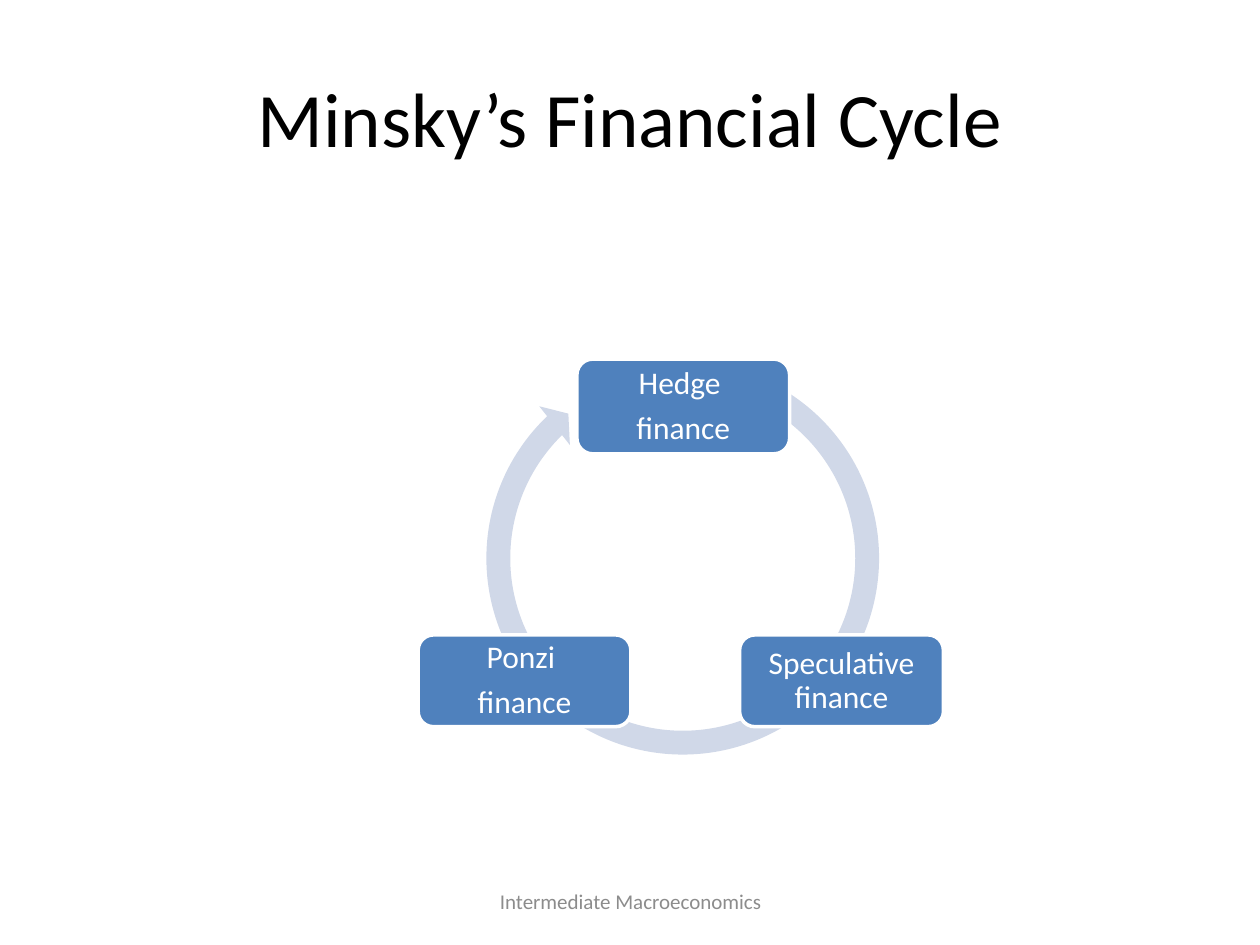
from pptx import Presentation
from pptx import util as u
from pptx.dml.color import RGBColor
from pptx.enum import shapes, text

BLACK = RGBColor(0x00, 0x00, 0x00)
WHITE = RGBColor(0xFF, 0xFF, 0xFF)
GREY = RGBColor(0x8C, 0x8C, 0x8C)
BLUE = RGBColor(0x4F, 0x81, 0xBD)
PALE_BLUE = RGBColor(0xD0, 0xD8, 0xE8)
FONT = "Calibri"

STAGES = [
    (["Hedge ", "finance"], (11.63, 7.24, 4.29, 1.91)),
    (["Speculative finance"], (14.91, 12.8, 4.11, 1.85)),
    (["Ponzi ", "finance"], (8.43, 12.8, 4.29, 1.85)),
]


def lengths(place):
    return [u.Cm(value) for value in place]


def write_centred(frame, lines, size, color):
    frame.word_wrap = True
    frame.vertical_anchor = text.MSO_ANCHOR.MIDDLE
    for index, line in enumerate(lines):
        paragraph = frame.paragraphs[0] if index == 0 else frame.add_paragraph()
        paragraph.alignment = text.PP_ALIGN.CENTER
        run = paragraph.add_run()
        run.text = line
        run.font.name = FONT
        run.font.size = u.Pt(size)
        run.font.color.rgb = color


def add_label(slide, place, words, size, color):
    label = slide.shapes.add_textbox(*lengths(place))
    write_centred(label.text_frame, [words], size, color)


def add_cycle_arrow(cycle):
    arrow = cycle.shapes.add_shape(
        shapes.MSO_SHAPE.CIRCULAR_ARROW, *lengths((9.55, 7.04, 8.43, 8.43)))
    for index, value in enumerate((0.057, 3.405, 135.584, 175.137, 0.059)):
        arrow.adjustments[index] = value
    arrow.shadow.inherit = False
    arrow.fill.solid()
    arrow.fill.fore_color.rgb = PALE_BLUE
    arrow.line.fill.background()


def add_stage(cycle, lines, place):
    stage = cycle.shapes.add_shape(
        shapes.MSO_SHAPE.ROUNDED_RECTANGLE, *lengths(place))
    stage.shadow.inherit = False
    stage.fill.solid()
    stage.fill.fore_color.rgb = BLUE
    stage.line.color.rgb = WHITE
    stage.line.width = u.Pt(2)
    frame = stage.text_frame
    frame.margin_left = frame.margin_right = u.Cm(0.18)
    frame.margin_top = frame.margin_bottom = u.Cm(0.18)
    write_centred(frame, lines, 18, WHITE)
    for paragraph in frame.paragraphs:
        paragraph.line_spacing = 0.9
        paragraph.space_after = u.Pt(6.3)


def main():
    deck = Presentation()
    deck.slide_width = u.Cm(25.4)
    deck.slide_height = u.Cm(19.05)
    slide = deck.slides.add_slide(deck.slide_layouts[6])
    add_label(slide, (1.27, 0.76, 22.86, 3.18),
              "Minsky’s Financial Cycle", 44, BLACK)
    add_label(slide, (8.69, 17.65, 8.05, 1.02),
              "Intermediate Macroeconomics", 12, GREY)
    cycle = slide.shapes.add_group_shape()
    add_cycle_arrow(cycle)
    for lines, place in STAGES:
        add_stage(cycle, lines, place)
    deck.save("out.pptx")


if __name__ == "__main__":
    main()
